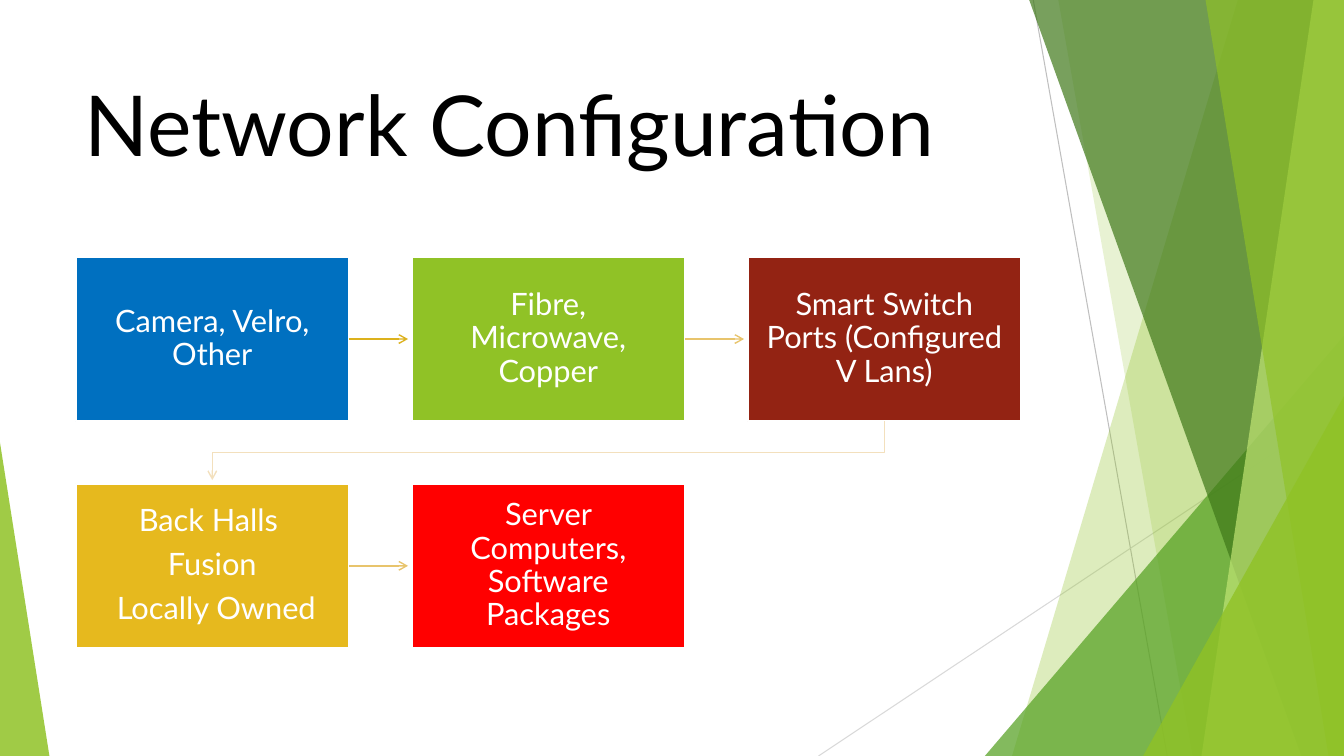
from pptx import Presentation
from pptx.dml.color import RGBColor
from pptx.enum.shapes import MSO_CONNECTOR as CONNECTOR, MSO_SHAPE as SHAPE
from pptx.enum.text import MSO_ANCHOR as ANCHOR, PP_ALIGN as ALIGN
from pptx.oxml.ns import qn
from pptx.util import Inches, Pt
from lxml.etree import SubElement

WHITE = RGBColor(0xFF, 0xFF, 0xFF)
BLACK = RGBColor(0, 0, 0)
GREEN = RGBColor(0x90, 0xC2, 0x26)
MID_GREEN = RGBColor(0x54, 0xA0, 0x21)
DARK_GREEN = RGBColor(0x3F, 0x78, 0x19)
PALE_GREEN = RGBColor(0xC0, 0xE4, 0x74)
BLUE = RGBColor(0, 0x70, 0xC0)
BROWN = RGBColor(0x93, 0x23, 0x13)
GOLD = RGBColor(0xE6, 0xB9, 0x1E)
RED = RGBColor(0xFF, 0, 0)
GREY = RGBColor(0xBF, 0xBF, 0xBF)
LIGHT_GREY = RGBColor(0xD9, 0xD9, 0xD9)
ARROW_GOLD = RGBColor(0xDC, 0xB1, 0x1D)
ARROW_SAND = RGBColor(0xE8, 0xC4, 0x6C)
ARROW_CREAM = RGBColor(0xF3, 0xE0, 0xBD)
FONT = "Lato"

presentation = Presentation()
presentation.slide_width = Inches(13.333)
presentation.slide_height = Inches(7.5)
slide = presentation.slides.add_slide(presentation.slide_layouts[6])
shapes = slide.shapes
across = presentation.slide_width / 100
down = presentation.slide_height / 100


def draw_line(shape, color, width, arrow=False):
    shape.line.color.rgb = color
    shape.line.width = Pt(width)
    if shape._element.spPr.find(qn("a:effectLst")) is None:
        SubElement(shape._element.spPr, qn("a:effectLst"))
    if arrow:
        SubElement(shape.line._get_or_add_ln(), qn("a:tailEnd"), type="arrow")


def add_run(paragraph, text, size, color):
    run = paragraph.add_run()
    run.text = text
    run.font.name = FONT
    run.font.size = Pt(size)
    run.font.color.rgb = color


for x1, y1, x2, color in ((76.88, 0, 86.85, GREY), (100, 53.73, 60.9, LIGHT_GREY)):
    thin_line = shapes.add_connector(
        CONNECTOR.STRAIGHT, int(x1 * across), int(y1 * down), int(x2 * across), int(100 * down))
    draw_line(thin_line, color, 0.75)

facets = (
    ("band", 92.1, 75.3, GREEN, 30),
    ("band", 78.75, 88.73, GREEN, 20),
    ("right triangle", 73.28, 44.4, MID_GREEN, 72),
    ("band", 76.58, 96.83, DARK_GREEN, 70),
    ("band", 97.73, 89.4, PALE_GREEN, 70),
    ("band", 89.7, 98.85, GREEN, 65),
    ("right triangle", 85.05, 52.4, GREEN, 80),
    ("left triangle", 3.68, 58.53, GREEN, 85),
)
for kind, first, second, color, opacity in facets:
    if kind == "band":
        builder = shapes.build_freeform(int(first * across), 0)
        builder.add_line_segments([
            (int(100 * across), 0),
            (int(100 * across), int(100 * down)),
            (int(second * across), int(100 * down)),
        ], close=True)
        facet = builder.convert_to_shape()
    else:
        left, right, apex = (first, 100, 1) if kind == "right triangle" else (0, first, 0)
        facet = shapes.add_shape(
            SHAPE.ISOSCELES_TRIANGLE, int(left * across), int(second * down),
            int((right - left) * across), int((100 - second) * down))
        facet.adjustments[0] = apex
    facet.shadow.inherit = False
    facet.line.fill.background()
    facet.fill.solid()
    facet.fill.fore_color.rgb = color
    color_element = facet._element.spPr.find(qn("a:solidFill")).find(qn("a:srgbClr"))
    SubElement(color_element, qn("a:alpha"), val=str(opacity * 1000))

title = shapes.add_textbox(
    int(5.55 * across), int(8.93 * down), int(70.5 * across), int(19.2 * down))
title.text_frame.word_wrap = True
add_run(title.text_frame.paragraphs[0], "Network Configuration", 60, BLACK)

box_width, box_height = int(20.33 * across), int(21.7 * down)
steps = (
    (0, 0, BLUE, ["Camera, Velro, Other"]),
    (1, 0, GREEN, ["Fibre, Microwave, Copper"]),
    (2, 0, BROWN, ["Smart Switch Ports (Configured V Lans)"]),
    (0, 1, GOLD, ["Back Halls ", "Fusion", " Locally Owned"]),
    (1, 1, RED, ["Server Computers, Software Packages"]),
)
boxes = []
for column, row, color, lines in steps:
    box = shapes.add_shape(
        SHAPE.RECTANGLE, int((5.63 + 25 * column) * across), int((34 + 30 * row) * down),
        box_width, box_height)
    box.shadow.inherit = False
    box.fill.solid()
    box.fill.fore_color.rgb = color
    draw_line(box, WHITE, 1.5)
    frame = box.text_frame
    frame.word_wrap = True
    frame.vertical_anchor = ANCHOR.MIDDLE
    frame.margin_left = frame.margin_right = Inches(0.17)
    frame.margin_top = frame.margin_bottom = Inches(0.17)
    for index, line in enumerate(lines):
        paragraph = frame.add_paragraph() if index else frame.paragraphs[0]
        paragraph.alignment = ALIGN.CENTER
        paragraph.line_spacing = 0.9
        paragraph.space_after = Pt(7.7)
        add_run(paragraph, line, 22, WHITE)
    boxes.append(box)

camera, fibre, switch, fusion, server = boxes
for box, color in ((camera, ARROW_GOLD), (fibre, ARROW_SAND), (fusion, ARROW_SAND)):
    start, middle = box.left + box_width, box.top + box_height // 2
    arrow = shapes.add_connector(
        CONNECTOR.STRAIGHT, start, middle, start + int(4.4 * across), middle)
    arrow.begin_connect(box, 3)
    draw_line(arrow, color, 1, arrow=True)

switch_center = switch.left + box_width // 2
fusion_center = fusion.left + box_width // 2
switch_bottom = switch.top + box_height
turn = (switch_bottom + fusion.top) // 2
builder = shapes.build_freeform(switch_center, switch_bottom)
builder.add_line_segments([
    (switch_center, turn),
    (fusion_center, turn),
    (fusion_center, fusion.top - int(0.5 * down)),
], close=False)
return_arrow = builder.convert_to_shape()
return_arrow.shadow.inherit = False
return_arrow.fill.background()
draw_line(return_arrow, ARROW_CREAM, 1, arrow=True)

presentation.save("out.pptx")
